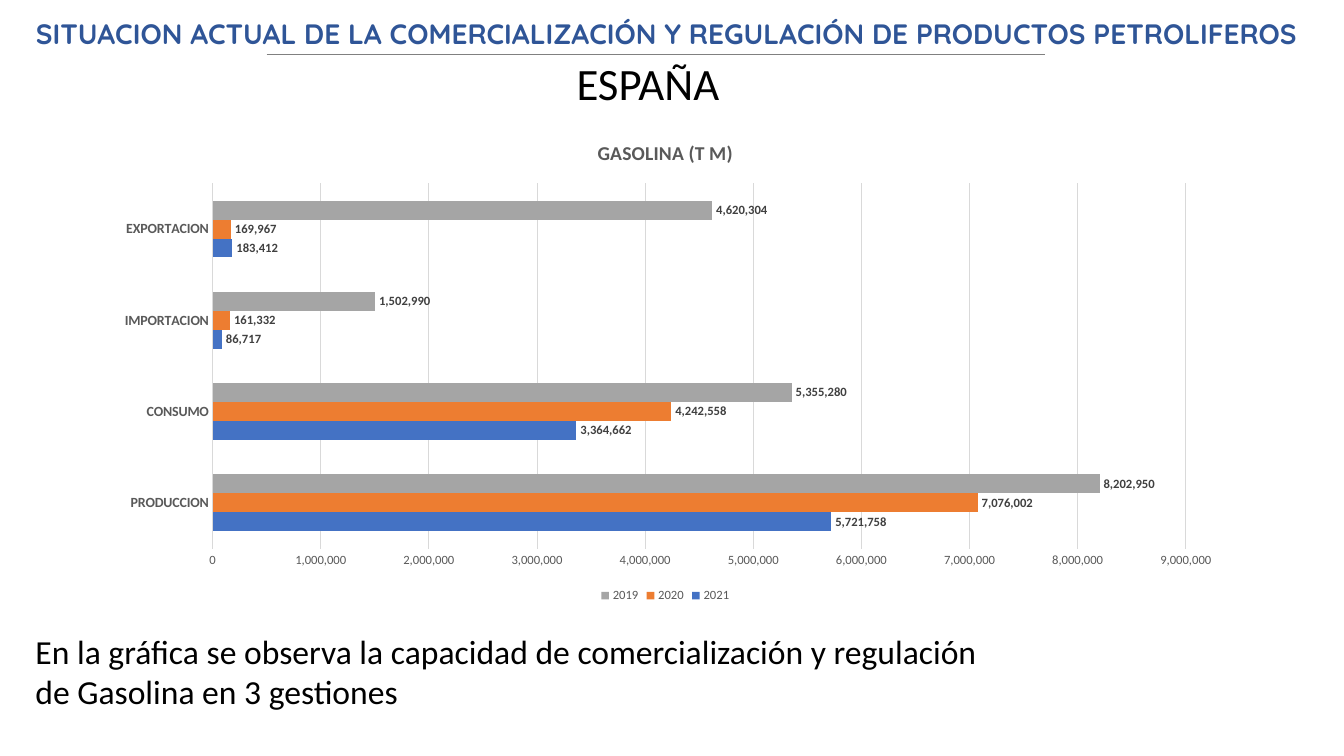
import pptx
import pptx.chart.data
import pptx.dml.color
import pptx.enum.chart
import pptx.enum.shapes
import pptx.enum.text
import pptx.oxml
import pptx.oxml.ns
import pptx.util

COLORS = {
    "heading": "2F5597", "text": "000000", "rule": "808080",
    "axis": "595959", "grid": "D9D9D9", "label": "404040",
    "2021": "4472C4", "2020": "ED7D31", "2019": "A5A5A5",
}
WIDTH, HEIGHT = pptx.util.Inches(13.33), pptx.util.Inches(7.5)
CATEGORIES = ["PRODUCCION", "CONSUMO", "IMPORTACION", "EXPORTACION"]
GASOLINE = {
    "2021": [5721758, 3364662, 86717, 183412],
    "2020": [7076002, 4242558, 161332, 169967],
    "2019": [8202950, 5355280, 1502990, 4620304],
}
NUMBER_FORMAT = "#,##0"


def rgb(name):
    """Return the palette colour of that name."""
    return pptx.dml.color.RGBColor.from_string(COLORS[name])


def share(x, y, width, height):
    """Turn shares of the slide's size into a box."""
    return int(x * WIDTH), int(y * HEIGHT), int(width * WIDTH), int(height * HEIGHT)


def set_font(font, size, color, bold=False, face="Calibri"):
    """Apply size, colour, weight and face to a font."""
    font.size, font.bold, font.name = pptx.util.Pt(size), bold, face
    font.color.rgb = rgb(color)


def write(frame, text, align="LEFT", anchor="TOP", spacing=None, wrap=True, **style):
    """Put one formatted paragraph into a text frame."""
    frame.word_wrap = wrap
    frame.auto_size = pptx.enum.text.MSO_AUTO_SIZE.NONE
    frame.vertical_anchor = pptx.enum.text.MSO_ANCHOR[anchor]
    paragraph = frame.paragraphs[0]
    paragraph.alignment = pptx.enum.text.PP_ALIGN[align]
    paragraph.line_spacing = spacing
    run = paragraph.add_run()
    run.text = text
    set_font(run.font, **style)


def add_header(slide, box):
    """Place the heading, its rule and the country name below it."""
    left, top, width, height = box
    heading = slide.shapes.title
    heading.left, heading.top, heading.width, heading.height = box
    write(heading.text_frame,
          "SITUACION ACTUAL DE LA COMERCIALIZACIÓN Y REGULACIÓN DE PRODUCTOS PETROLIFEROS",
          align="CENTER", anchor="MIDDLE", spacing=0.9,
          size=20, color="heading", bold=True, face="Quicksand")
    rule_y = top + int(height * 0.64)
    rule = slide.shapes.add_connector(
        pptx.enum.shapes.MSO_CONNECTOR.STRAIGHT,
        left + int(width * 0.2), rule_y, left + int(width * 0.784), rule_y)
    rule.line.color.rgb = rgb("rule")
    rule.line.width = pptx.util.Pt(1)
    rule._element.spPr.append(pptx.oxml.parse_xml(
        f"<a:effectLst {pptx.oxml.ns.nsdecls('a')}/>"))
    country = slide.shapes.add_textbox(
        left + int(width * 0.425), top + int(height * 0.61),
        int(width * 0.133), int(height * 0.47))
    write(country.text_frame, "ESPAÑA", wrap=False, size=32, color="text")


def format_axes(chart):
    """Style the category and value axes."""
    for axis in (chart.category_axis, chart.value_axis):
        axis.major_tick_mark = axis.minor_tick_mark = pptx.enum.chart.XL_TICK_MARK.NONE
    categories, values = chart.category_axis, chart.value_axis
    set_font(categories.tick_labels.font, 10, "axis", bold=True)
    set_font(values.tick_labels.font, 9, "axis")
    values.tick_labels.number_format = NUMBER_FORMAT
    values.tick_labels.number_format_is_linked = False
    values.minimum_scale, values.maximum_scale, values.major_unit = 0, 9000000, 1000000
    values.format.line.fill.background()
    for line in (categories.format.line, values.major_gridlines.format.line):
        line.color.rgb = rgb("grid")
        line.width = pptx.util.Pt(0.75)


def format_series(series):
    """Colour the bars of one year and label their values."""
    series.format.fill.solid()
    series.format.fill.fore_color.rgb = rgb(series.name)
    series.invert_if_negative = False
    labels = series.data_labels
    labels.show_value = True
    labels.number_format, labels.number_format_is_linked = NUMBER_FORMAT, False
    labels.position = pptx.enum.chart.XL_LABEL_POSITION.OUTSIDE_END
    set_font(labels.font, 9, "label", bold=True)


def fix_plot_area(chart, **shares):
    """Set the inner plot area as shares of the chart's size."""
    settings = {"layoutTarget": "inner", "xMode": "edge", "yMode": "edge", **shares}
    children = "".join(f'<c:{key} val="{value}"/>' for key, value in settings.items())
    plot_area = chart._chartSpace.chart.plotArea
    for layout in plot_area.findall(pptx.oxml.ns.qn("c:layout")):
        plot_area.remove(layout)
    plot_area.insert(0, pptx.oxml.parse_xml(
        f"<c:layout {pptx.oxml.ns.nsdecls('c')}>"
        f"<c:manualLayout>{children}</c:manualLayout></c:layout>"))


def add_gasoline_chart(slide, box):
    """Draw the clustered bars of the three years."""
    data = pptx.chart.data.CategoryChartData(number_format=NUMBER_FORMAT)
    data.categories = CATEGORIES
    for year, tonnes in GASOLINE.items():
        data.add_series(year, tonnes)
    chart = slide.shapes.add_chart(
        pptx.enum.chart.XL_CHART_TYPE.BAR_CLUSTERED, *box, data).chart
    set_font(chart.font, 10, "text")
    chart.has_title = True
    write(chart.chart_title.text_frame, "GASOLINA (T M)", align="CENTER",
          size=14, color="axis", bold=True)
    chart.has_legend = True
    chart.legend.position = pptx.enum.chart.XL_LEGEND_POSITION.BOTTOM
    chart.legend.include_in_layout = False
    set_font(chart.legend.font, 9, "axis")
    plot = chart.plots[0]
    plot.gap_width, plot.overlap, plot.vary_by_categories = 182, 0, False
    for series in plot.series:
        format_series(series)
    format_axes(chart)
    fix_plot_area(chart, x=0.1, y=0.13, w=0.86, h=0.75)


def add_comment(slide, box):
    """Write the remark under the chart."""
    remark = slide.shapes.add_textbox(*box)
    write(remark.text_frame,
          "En la gráfica se observa la capacidad de comercialización y regulación "
          "de Gasolina en 3 gestiones", size=24, color="text")


def main():
    """Build the slide and save it."""
    deck = pptx.Presentation()
    deck.slide_width, deck.slide_height = WIDTH, HEIGHT
    slide = deck.slides.add_slide(deck.slide_layouts[5])
    add_header(slide, share(0, -0.043, 0.992, 0.18))
    add_gasoline_chart(slide, share(0.074, 0.159, 0.842, 0.644))
    add_comment(slide, share(0.019, 0.828, 0.732, 0.121))
    deck.save("out.pptx")


if __name__ == "__main__":
    main()
